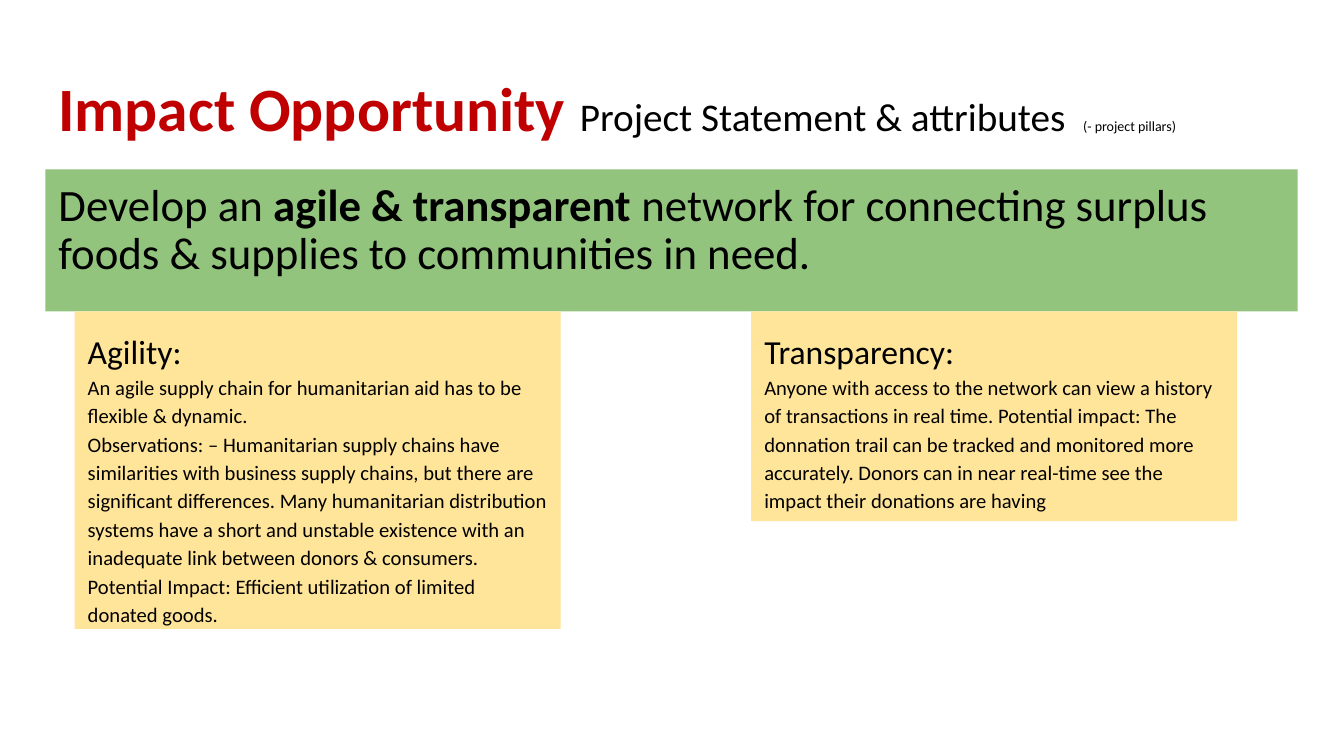
"""Builds the Impact Opportunity slide: headline, project statement and two attribute cards."""
from pptx import Presentation
from pptx import util as u
from pptx.dml.color import RGBColor
from pptx.enum import shapes, text

COLORS = {"headline": "C00000", "ink": "000000", "statement": "93C47D", "card": "FFE599"}
LEFT, WIDTH = 0.45, 12.42
CARD_TOP, CARD_WIDTH = 3.09, 4.82

deck = Presentation()
deck.slide_width, deck.slide_height = u.Inches(13.33), u.Inches(7.5)
page = deck.slides.add_slide(deck.slide_layouts[6])


def add_panel(left, top, width, height, fill=None):
    place = [u.Inches(length) for length in (left, top, width, height)]
    if fill:
        box = page.shapes.add_shape(shapes.MSO_SHAPE.RECTANGLE, *place)
        box.shadow.inherit = False
        box.fill.solid()
        box.fill.fore_color.rgb = RGBColor.from_string(COLORS[fill])
        box.line.fill.background()
    else:
        box = page.shapes.add_textbox(*place)
    frame = box.text_frame
    frame.word_wrap = True
    frame.vertical_anchor = text.MSO_ANCHOR.TOP
    frame.margin_left = frame.margin_right = u.Inches(0.13)
    frame.margin_top = frame.margin_bottom = u.Inches(0.13)
    return frame


def write(frame, paragraphs, spacing):
    for index, runs in enumerate(paragraphs):
        para = frame.add_paragraph() if index else frame.paragraphs[0]
        para.alignment = text.PP_ALIGN.LEFT
        para.line_spacing = spacing
        for words, size, bold, color in runs:
            span = para.add_run()
            span.text = words
            span.font.name = "Calibri"
            span.font.size = u.Pt(size)
            span.font.bold = bold
            span.font.color.rgb = RGBColor.from_string(COLORS[color])


write(add_panel(LEFT, 0.65, WIDTH, 0.84), [[
    ("Impact Opportunity ", 44, True, "headline"),
    ("Project Statement & attributes  ", 28, False, "ink"),
    ("(- project pillars)", 10, False, "ink"),
]], 0.9)

write(add_panel(LEFT, 1.68, WIDTH, CARD_TOP - 1.68, "statement"), [[
    ("Develop an ", 32, False, "ink"),
    ("agile & transparent ", 32, True, "ink"),
    ("network for connecting surplus foods & supplies to communities in need.", 32, False, "ink"),
]], 0.9)

cards = [
    (0.74, 3.15, "Agility:", [
        "An agile supply chain for humanitarian aid has to be flexible & dynamic.",
        "Observations: – Humanitarian supply chains have similarities with business supply chains, "
        "but there are significant differences. Many humanitarian distribution systems have a short "
        "and unstable existence with an inadequate link between donors & consumers.",
        "Potential Impact: Efficient utilization of limited donated goods.",
    ]),
    (7.45, 2.08, "Transparency:", [
        "Anyone with access to the network can view a history of transactions in real time. "
        "Potential impact: The donnation trail can be tracked and monitored more accurately. "
        "Donors can in near real-time see the impact their donations are having",
    ]),
]
for left, height, heading, details in cards:
    paragraphs = [[(heading, 24, False, "ink")]]
    paragraphs += [[(detail, 14.7, False, "ink")] for detail in details]
    write(add_panel(left, CARD_TOP, CARD_WIDTH, height, "card"), paragraphs, 1.15)

deck.save("out.pptx")
